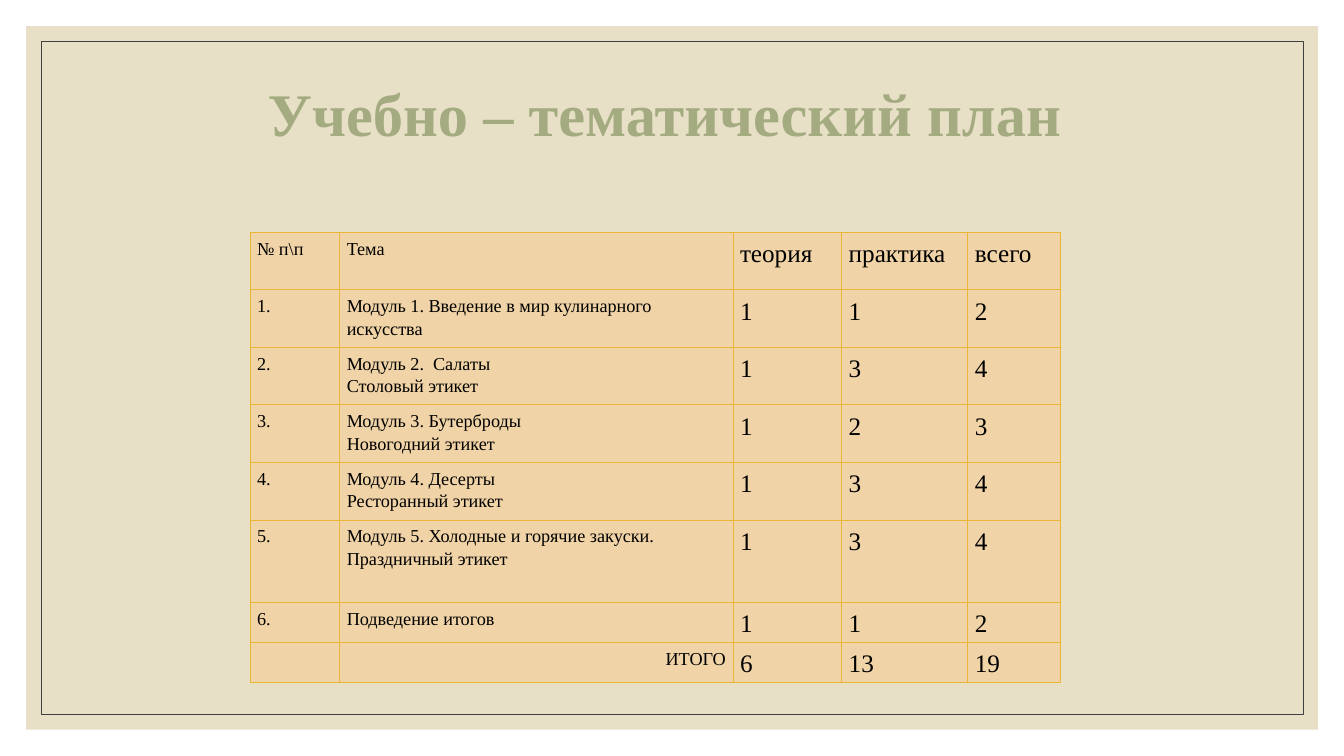
import pptx
import pptx.dml.color
import pptx.enum.shapes
import pptx.enum.text
import pptx.oxml
import pptx.oxml.ns
import pptx.util

Cm, Pt = pptx.util.Cm, pptx.util.Pt
ALIGN = pptx.enum.text.PP_ALIGN
FONT = "Times New Roman"
COLORS = {"panel": "E7E0C7", "frame": "404040", "title": "A5AB81",
          "cell": "F0D3A6", "border": "E9B635", "text": "000000"}


def rgb(name):
    return pptx.dml.color.RGBColor.from_string(COLORS[name])


def add_text(paragraph, text, size, color, bold=False):
    run = paragraph.add_run()
    run.text = text
    run.font.name = FONT
    run.font.size = Pt(size)
    run.font.bold = bold
    run.font.color.rgb = rgb(color)


deck = pptx.Presentation()
deck.slide_width, deck.slide_height = Cm(33.87), Cm(19.05)
slide = deck.slides.add_slide(deck.slide_layouts[5])
rectangle = pptx.enum.shapes.MSO_SHAPE.RECTANGLE

# Background panel and thin frame
panel = slide.shapes.add_shape(rectangle, Cm(0.66), Cm(0.66), Cm(32.56), Cm(17.73))
panel.fill.solid()
panel.fill.fore_color.rgb = rgb("panel")
panel.line.fill.background()
frame = slide.shapes.add_shape(rectangle, Cm(1.04), Cm(1.04), Cm(31.8), Cm(16.97))
frame.fill.background()
frame.line.color.rgb = rgb("frame")
frame.line.width = Pt(0.5)
for backdrop in (panel, frame):
    backdrop.shadow.inherit = False

# Title, brought in front of the panel
title = slide.shapes.title
frame.element.addnext(title.element)
title.left, title.top, title.width, title.height = Cm(2.97), Cm(1.78), Cm(27.94), Cm(3.81)
heading = title.text_frame
heading.word_wrap = True
heading.auto_size = pptx.enum.text.MSO_AUTO_SIZE.NONE
heading.vertical_anchor = pptx.enum.text.MSO_ANCHOR.TOP
heading.margin_top = Cm(0.33)
heading.margin_right = Cm(0.64)
heading.paragraphs[0].alignment = ALIGN.CENTER
heading.paragraphs[0].line_spacing = 0.9
add_text(heading.paragraphs[0], "Учебно – тематический план", 43.2, "title", bold=True)

# Study plan: number, topic, theory, practice, total
plan = [
    ("№ п\\п", "Тема", "теория", "практика", "всего"),
    ("1.", "Модуль 1. Введение в мир кулинарного искусства", "1", "1", "2"),
    ("2.", "Модуль 2.  Салаты\nСтоловый этикет", "1", "3", "4"),
    ("3.", "Модуль 3. Бутерброды\nНовогодний этикет", "1", "2", "3"),
    ("4.", "Модуль 4. Десерты\nРесторанный этикет", "1", "3", "4"),
    ("5.", "Модуль 5. Холодные и горячие закуски. Праздничный этикет", "1", "3", "4"),
    ("6.", "Подведение итогов", "1", "1", "2"),
    ("", "ИТОГО", "6", "13", "19"),
]
column_widths = [2.26, 9.91, 2.74, 3.18, 2.34]
row_heights = [1.45] * 5 + [2.08, 1, 1]
schedule = slide.shapes.add_table(
    len(plan), len(column_widths), Cm(6.3), Cm(5.85),
    Cm(sum(column_widths)), Cm(sum(row_heights))).table
for column, width in zip(schedule.columns, column_widths):
    column.width = Cm(width)
for row, height in zip(schedule.rows, row_heights):
    row.height = Cm(height)

for r, entries in enumerate(plan):
    for c, entry in enumerate(entries):
        cell = schedule.cell(r, c)
        cell.margin_left = cell.margin_right = Cm(0.18)
        cell.margin_top = cell.margin_bottom = Cm(0.1)
        cell.fill.solid()
        cell.fill.fore_color.rgb = rgb("cell")

        # Cell text
        for i, line in enumerate(entry.split("\n") if entry else []):
            paragraph = cell.text_frame.paragraphs[0] if i == 0 else cell.text_frame.add_paragraph()
            paragraph.line_spacing = 1.14
            paragraph.alignment = ALIGN.RIGHT if entry == "ИТОГО" else ALIGN.LEFT
            if c == 0 and 1 <= r <= 4:
                paragraph.alignment = ALIGN.JUSTIFY
            add_text(paragraph, line, 13 if c < 2 else 18, "text")

        # Cell borders
        properties = cell._tc.get_or_add_tcPr()
        for position, side in enumerate(("lnL", "lnR", "lnT", "lnB")):
            properties.insert(position, pptx.oxml.parse_xml(
                f'<a:{side} {pptx.oxml.ns.nsdecls("a")} w="{Pt(0.5)}"><a:solidFill>'
                f'<a:srgbClr val="{COLORS["border"]}"/></a:solidFill></a:{side}>'))

deck.save("out.pptx")
